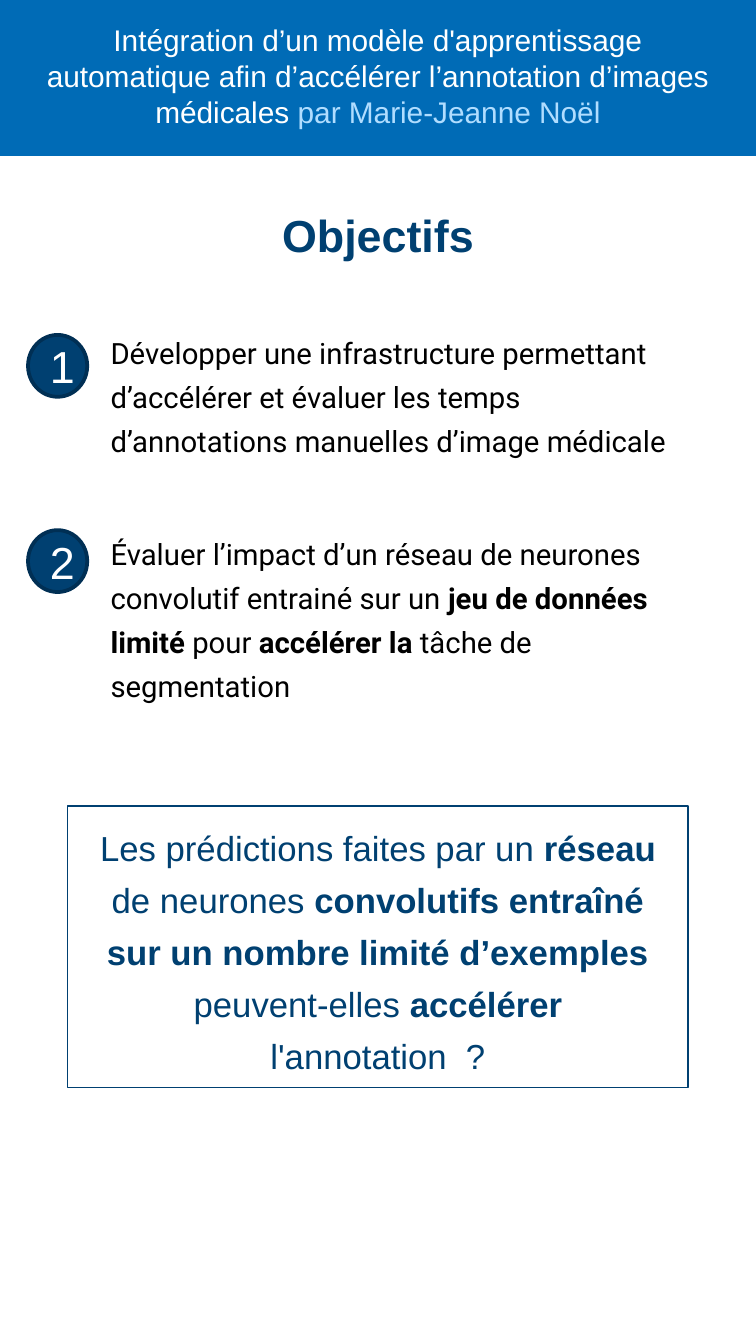
import pptx
import pptx.dml.color
import pptx.enum.shapes
import pptx.enum.text
import pptx.util

Cm = pptx.util.Cm
Pt = pptx.util.Pt
Kind = pptx.enum.shapes.MSO_SHAPE
Align = pptx.enum.text.PP_ALIGN
Anchor = pptx.enum.text.MSO_ANCHOR

WIDE, HIGH = 14.29, 25.4


def hue(code):
    return pptx.dml.color.RGBColor.from_string(code)


def put(para, text, size=16, font="Arial", color="000000", bold=False):
    """Add text to a paragraph; parts between ** switch the weight."""
    for i, part in enumerate(text.split("**")):
        if part:
            run = para.add_run()
            run.text = part
            run.font.size = Pt(size)
            run.font.name = font
            run.font.bold = bold or i % 2 == 1
            run.font.color.rgb = hue(color)


class Page:
    navy, blue, dark = "004071", "006BB6", "002F54"
    white, pale = "FFFFFF", "B0DDFF"

    def __init__(self, deck):
        self.slide = deck.slides.add_slide(deck.slide_layouts[6])

    def shape(self, kind, box, fill=None, line=None, width=1):
        item = self.slide.shapes.add_shape(kind, *map(Cm, box))
        item.shadow.inherit = False
        if fill:
            item.fill.solid()
            item.fill.fore_color.rgb = hue(fill)
        else:
            item.fill.background()
        if line:
            item.line.color.rgb = hue(line)
            item.line.width = Pt(width)
        else:
            item.line.fill.background()
        frame = item.text_frame
        frame.vertical_anchor = Anchor.MIDDLE
        frame.paragraphs[0].alignment = Align.CENTER
        return frame

    def text(self, box, align=Align.LEFT):
        frame = self.slide.shapes.add_textbox(*map(Cm, box)).text_frame
        frame.word_wrap = True
        frame.paragraphs[0].alignment = align
        return frame

    def badge(self, label, top):
        frame = self.shape(Kind.OVAL, (0.53, top, 1.12, 1.17),
                           self.navy, self.dark, 2)
        put(frame.paragraphs[0], label, size=24, color=self.white)

    def goals(self, box, items, gap):
        frame = self.text(box)
        for i, item in enumerate(items):
            para = frame.add_paragraph() if i else frame.paragraphs[0]
            para.line_spacing = 1.25
            if i:
                para.space_before = Pt(gap)
            put(para, item, size=15.7, font="Roboto")


def main():
    deck = pptx.Presentation()
    deck.slide_width, deck.slide_height = Cm(WIDE), Cm(HIGH)
    page = Page(deck)

    # Header band
    page.shape(Kind.RECTANGLE, (0, 0, WIDE, 2.95), page.blue)
    para = page.text((0.53, 0.29, 13.23, 2.31), Align.CENTER).paragraphs[0]
    put(para, "Intégration d’un modèle d'apprentissage automatique afin "
        "d’accélérer l’annotation d’images médicales ", color=page.white)
    put(para, "par Marie-Jeanne Noël", color=page.pale)

    # Title
    para = page.text((0.72, 3.81, 12.85, 2.51), Align.CENTER).paragraphs[0]
    put(para, "Objectifs", size=24, color=page.navy, bold=True)

    # Numbered goals
    page.goals((1.84, 6.05, 11.73, 17.25), (
        "Développer une infrastructure permettant d’accélérer et évaluer "
        "les temps d’annotations manuelles d’image médicale",
        "Évaluer l’impact d’un réseau de neurones convolutif entrainé sur un "
        "**jeu de données limité **pour **accélérer la **tâche de "
        "segmentation",
    ), gap=37)
    for i in range(2):
        page.badge(str(i + 1), 6.33 + 3.69 * i)

    # Research question
    frame = page.shape(Kind.RECTANGLE, (1.28, 15.23, 11.73, 5.33),
                       line=page.navy, width=0.75)
    frame.margin_left = frame.margin_right = Cm(0.4)
    para = frame.paragraphs[0]
    para.line_spacing = 1.25
    put(para, "Les prédictions faites par un **réseau** de neurones "
        "**convolutifs entraîné sur un nombre limité d’exemples **"
        "peuvent-elles **accélérer **l'annotation  ?",
        size=18.6, color=page.navy)

    deck.save("out.pptx")


if __name__ == "__main__":
    main()
